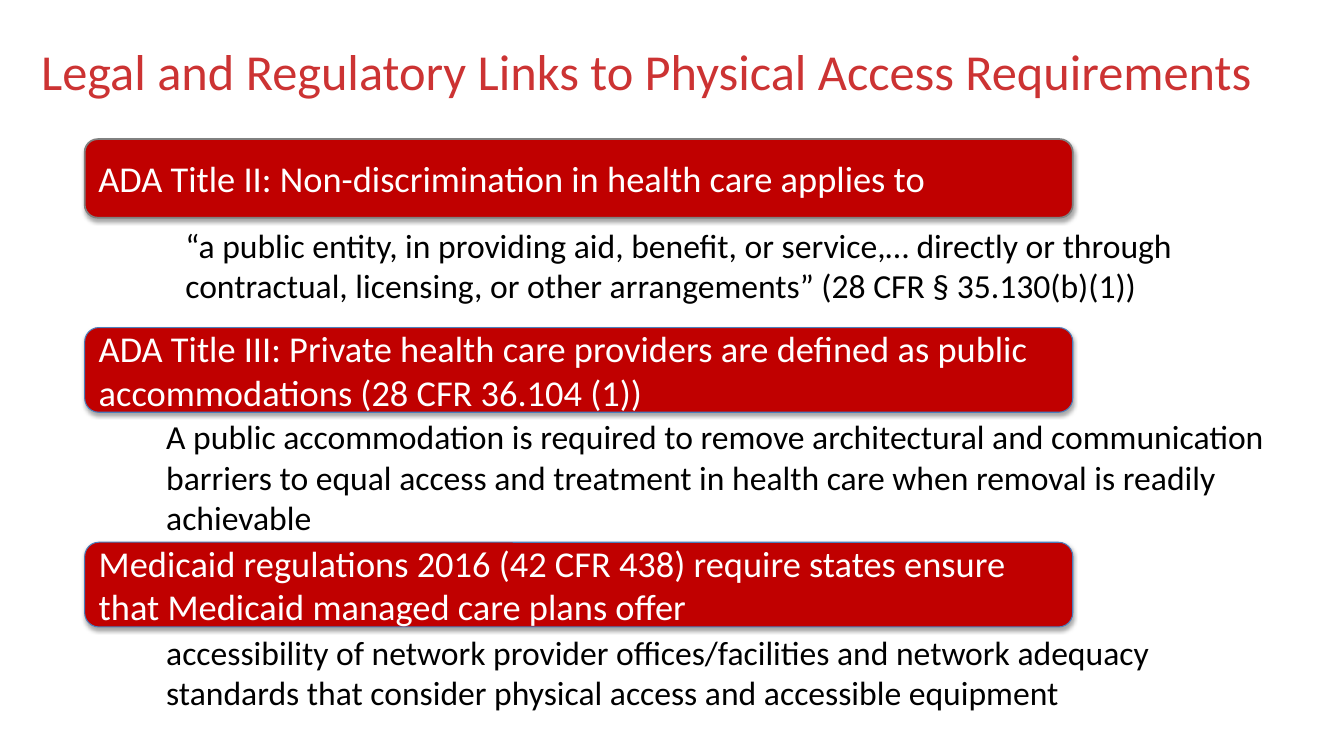
from lxml import etree
from pptx import Presentation
from pptx.dml.color import RGBColor
from pptx.enum.shapes import MSO_SHAPE
from pptx.enum.text import MSO_ANCHOR, PP_ALIGN
from pptx.oxml.ns import qn
from pptx.util import Pt

ROUNDED = MSO_SHAPE.ROUNDED_RECTANGLE
MIDDLE, TOP = MSO_ANCHOR.MIDDLE, MSO_ANCHOR.TOP
LEFT, CENTER = PP_ALIGN.LEFT, PP_ALIGN.CENTER

EMU_PER_PX = 9144
FONT = "Calibri"
COLORS = {
    "title": "CC3333",
    "banner": "C00000",
    "banner_text": "FFFFFF",
    "gray_edge": "808080",
    "blue_edge": "4B7EBC",
    "body": "000000",
    "shadow": "000000",
}


def px(*lengths):
    return [length * EMU_PER_PX for length in lengths]


def color(name):
    return RGBColor.from_string(COLORS[name])


class LegalSlide:
    def __init__(self, slide):
        self.shapes = slide.shapes

    def set_text(self, shape, text, size, ink, align=LEFT, anchor=TOP):
        frame = shape.text_frame
        frame.word_wrap = True
        frame.vertical_anchor = anchor
        frame.text = text
        paragraph = frame.paragraphs[0]
        paragraph.alignment = align
        font = paragraph.runs[0].font
        font.name = FONT
        font.size = Pt(size)
        font.color.rgb = color(ink)

    def text(self, box, text, size, ink, align=LEFT, anchor=TOP):
        self.set_text(self.shapes.add_textbox(*px(*box)), text, size, ink, align, anchor)

    def banner(self, top, height, text, edge, edge_width):
        banner = self.shapes.add_shape(ROUNDED, *px(84, top, 980, height))
        banner.fill.solid()
        banner.fill.fore_color.rgb = color("banner")
        banner.line.color.rgb = color(edge)
        banner.line.width = Pt(edge_width)
        self.drop_shadow(banner)
        self.set_text(banner, text, 26, "banner_text", anchor=MIDDLE)

    def drop_shadow(self, shape):
        shape.shadow.inherit = False
        effects = shape._element.spPr.find(qn("a:effectLst"))
        shadow = etree.SubElement(effects, qn("a:outerShdw"), blurRad="40000",
                                  dist="23000", dir="5400000", rotWithShape="0")
        tint = etree.SubElement(shadow, qn("a:srgbClr"), val=COLORS["shadow"])
        etree.SubElement(tint, qn("a:alpha"), val="35000")


RULES = [
    (138, 78, "gray_edge", 1.25,
     "ADA Title II: Non-discrimination in health care applies to",
     (174, 218, 1092, 91),
     "“a public entity, in providing aid, benefit, or service,… directly or through "
     "contractual, licensing, or other arrangements” (28 CFR § 35.130(b)(1))"),
    (325, 84, "blue_edge", 0.75,
     "ADA Title III: Private health care providers are defined as public "
     "accommodations (28 CFR 36.104 (1))",
     (155, 408, 1111, 131),
     "A public accommodation is required to remove architectural and communication "
     "barriers to equal access and treatment in health care when removal is readily "
     "achievable"),
    (538, 84, "blue_edge", 0.75,
     "Medicaid regulations 2016 (42 CFR 438) require states ensure "
     "that Medicaid managed care plans offer",
     (155, 622, 1111, 91),
     "accessibility of network provider offices/facilities and network adequacy "
     "standards that consider physical access and accessible equipment"),
]


def main():
    deck = Presentation()
    deck.slide_width, deck.slide_height = px(1333, 750)
    page = LegalSlide(deck.slides.add_slide(deck.slide_layouts[6]))
    page.text((27, 16, 1240, 108),
              "Legal and Regulatory Links to Physical Access Requirements ",
              36, "title", CENTER, MIDDLE)
    for top, height, edge, edge_width, heading, body_box, body in RULES:
        page.banner(top, height, heading, edge, edge_width)
        page.text(body_box, body, 24, "body")
    deck.save("out.pptx")


if __name__ == "__main__":
    main()
